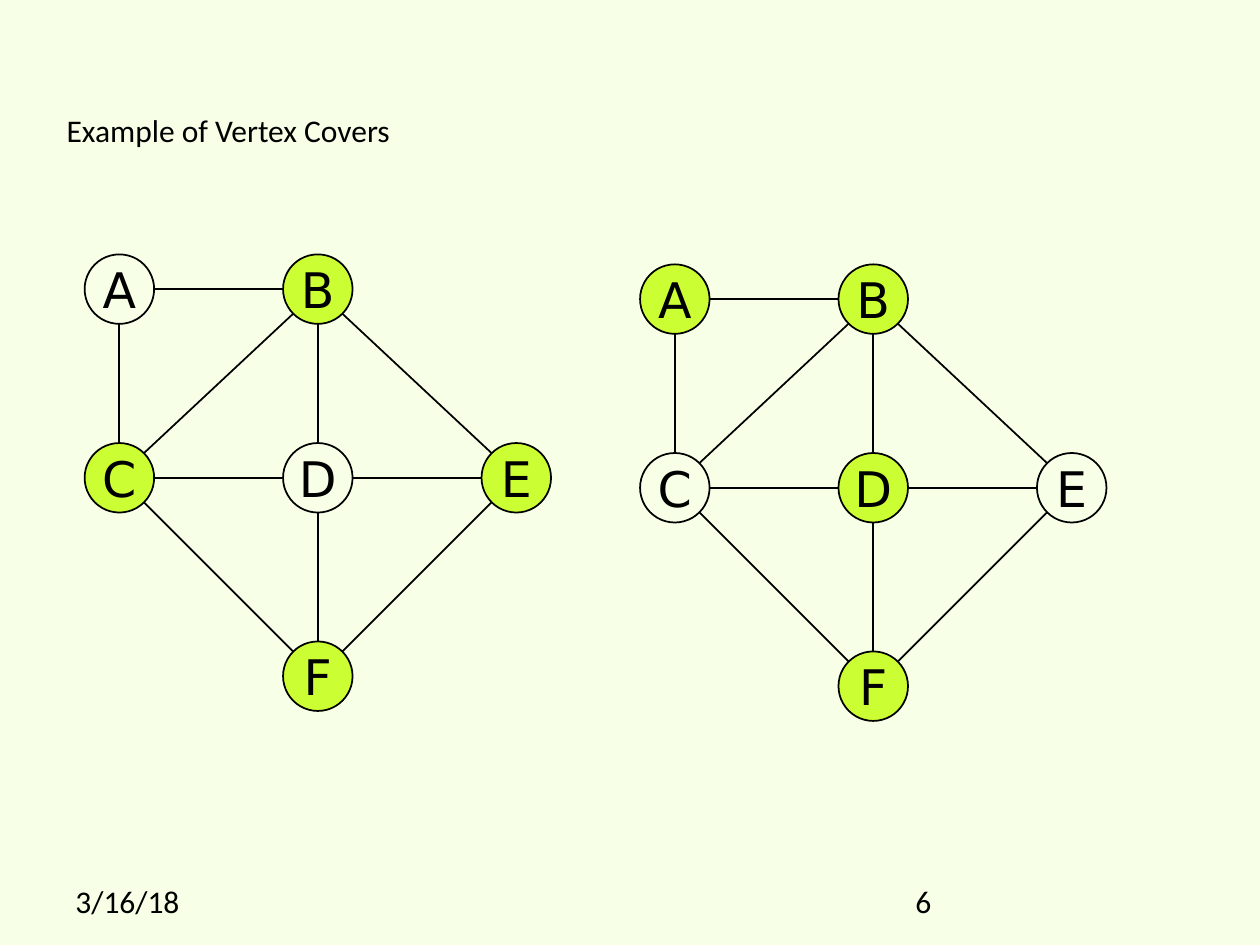
"""Build a slide that shows two vertex covers of the same graph."""
from dataclasses import dataclass
from math import copysign, sqrt

from lxml.etree import SubElement
from pptx import Presentation
from pptx.dml.color import RGBColor
from pptx.enum.shapes import MSO_CONNECTOR, MSO_SHAPE
from pptx.enum.text import MSO_ANCHOR, PP_ALIGN
from pptx.oxml.ns import qn
from pptx.slide import Slide
from pptx.text.text import TextFrame
from pptx.util import Pt

BACKGROUND = "F7FFE7"
COVER = "CCFF33"
BLACK = "000000"
DIAMETER = 39.7
COLUMN_STEP = 113.4
ROW_OFFSETS = (0, 107.8, 221.2)
VERTICES = {"A": (0, 0), "B": (1, 0), "C": (0, 1), "E": (2, 1), "D": (1, 1), "F": (1, 2)}
EDGES = ("BA", "AC", "CD", "BD", "CF", "DF", "DE", "BE", "CB", "FE")


@dataclass(frozen=True)
class Label:
    text: str
    left: float
    top: float
    width: float
    height: float
    anchor: MSO_ANCHOR = MSO_ANCHOR.TOP


@dataclass(frozen=True)
class Graph:
    center_x: float
    center_y: float
    cover: str
    uncovered_fill: str | None

    def center(self, vertex: str) -> tuple[float, float]:
        column, row = VERTICES[vertex]
        return self.center_x + column * COLUMN_STEP, self.center_y + ROW_OFFSETS[row]


LABELS = (
    Label("3/16/18", 36, 500.4, 168, 28.8),
    Label("6", 516, 500.4, 168, 28.8),
    Label("Example of Vertex Covers", 31, 26, 674.6, 62.6, MSO_ANCHOR.BOTTOM),
)
GRAPHS = (
    Graph(68.2, 165.2, "BCEF", None),
    Graph(385.6, 170.9, "ABDF", BACKGROUND),
)


def color(value: str) -> RGBColor:
    return RGBColor.from_string(value)


def set_text(frame: TextFrame, text: str, font_name: str, size: float) -> None:
    frame.text = text
    font = frame.paragraphs[0].runs[0].font
    font.name = font_name
    font.size = Pt(size)
    font.color.rgb = color(BLACK)


def draw_label(slide: Slide, label: Label) -> None:
    box = slide.shapes.add_textbox(
        Pt(label.left), Pt(label.top), Pt(label.width), Pt(label.height)
    )
    frame = box.text_frame
    frame.word_wrap = True
    frame.vertical_anchor = label.anchor
    set_text(frame, label.text, "Calibri", 18)


def draw_vertex(slide: Slide, graph: Graph, vertex: str) -> None:
    x, y = graph.center(vertex)
    shape = slide.shapes.add_shape(
        MSO_SHAPE.OVAL, Pt(x - DIAMETER / 2), Pt(y - DIAMETER / 2), Pt(DIAMETER), Pt(DIAMETER)
    )
    shape.shadow.inherit = False
    fill = COVER if vertex in graph.cover else graph.uncovered_fill
    if fill:
        shape.fill.solid()
        shape.fill.fore_color.rgb = color(fill)
    else:
        shape.fill.background()
    shape.line.color.rgb = color(BLACK)
    shape.line.width = Pt(1)
    frame = shape.text_frame
    frame.word_wrap = False
    frame.vertical_anchor = MSO_ANCHOR.MIDDLE
    set_text(frame, vertex, "DejaVu Sans", 28)
    frame.paragraphs[0].alignment = PP_ALIGN.CENTER


def draw_edge(slide: Slide, graph: Graph, edge: str) -> None:
    (start_x, start_y), (end_x, end_y) = (graph.center(vertex) for vertex in edge)
    step_x, step_y = (
        copysign(1, delta) if delta else 0 for delta in (end_x - start_x, end_y - start_y)
    )
    reach = DIAMETER / 2 / sqrt(abs(step_x) + abs(step_y))
    connector = slide.shapes.add_connector(
        MSO_CONNECTOR.STRAIGHT,
        Pt(start_x + step_x * reach),
        Pt(start_y + step_y * reach),
        Pt(end_x - step_x * reach),
        Pt(end_y - step_y * reach),
    )
    connector.line.color.rgb = color(BLACK)
    connector.line.width = Pt(1)
    SubElement(connector._element.spPr, qn("a:effectLst"))


def draw_graph(slide: Slide, graph: Graph) -> None:
    for vertex in VERTICES:
        draw_vertex(slide, graph, vertex)
    for edge in EDGES:
        draw_edge(slide, graph, edge)


def main() -> None:
    presentation = Presentation()
    presentation.slide_width = Pt(720)
    presentation.slide_height = Pt(540)
    slide = presentation.slides.add_slide(presentation.slide_layouts[6])
    slide.background.fill.solid()
    slide.background.fill.fore_color.rgb = color(BACKGROUND)
    for label in LABELS:
        draw_label(slide, label)
    for graph in GRAPHS:
        draw_graph(slide, graph)
    presentation.save("out.pptx")


if __name__ == "__main__":
    main()
